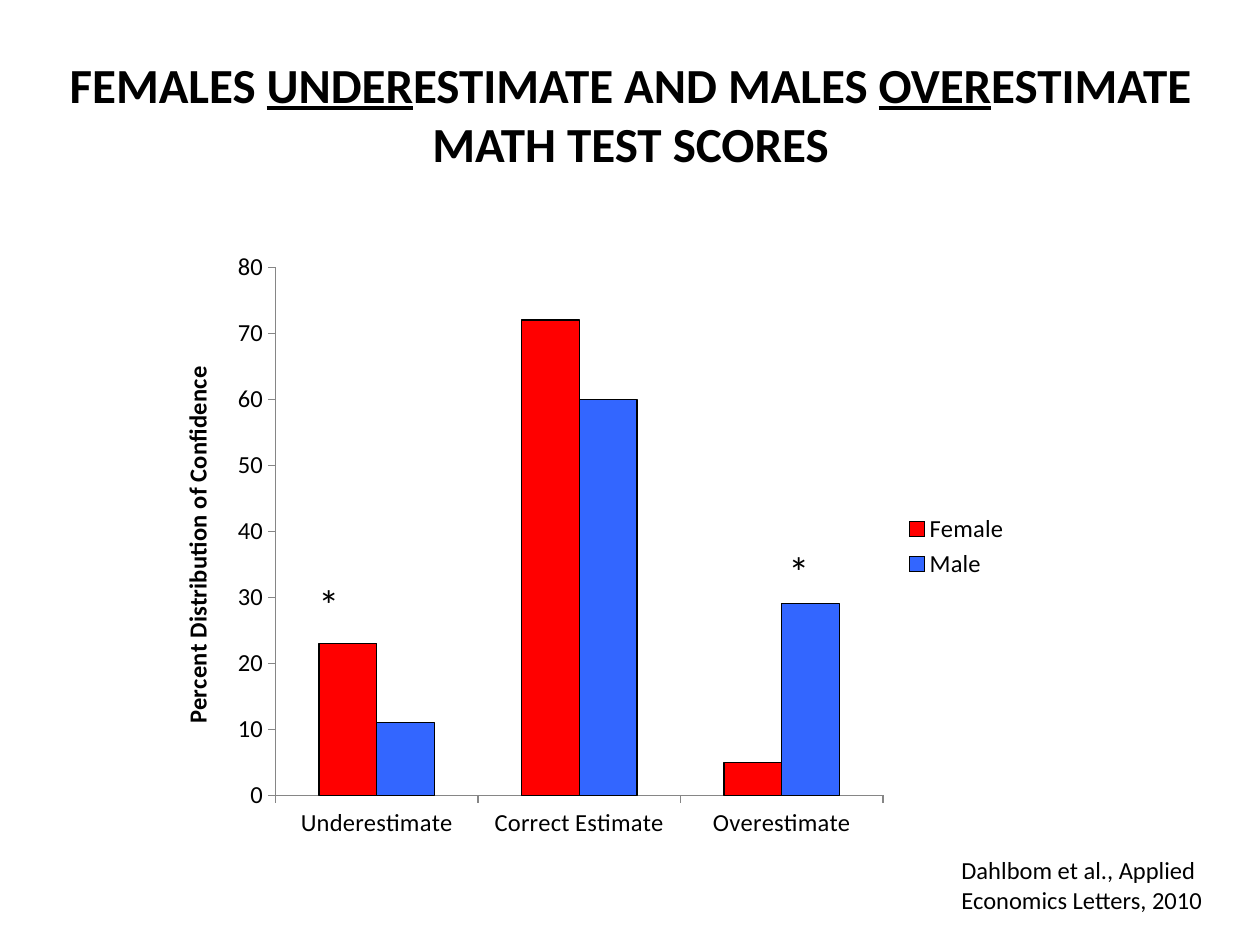
from lxml import etree
from pptx import Presentation
from pptx import util as u
from pptx.chart.data import CategoryChartData
from pptx.dml.color import RGBColor
from pptx.enum import chart as charts, text
from pptx.oxml.ns import qn

PX_PER_INCH = 126
FONT = "Calibri"
BLACK = "000000"
AXIS_GRAY = "868686"
CATEGORIES = ["Underestimate", "Correct Estimate", "Overestimate"]
SERIES = [("Female", (23, 72, 5), "FF0000"), ("Male", (11, 60, 29), "3366FF")]
TITLE = [
    ("FEMALES ", False),
    ("UNDER", True),
    ("ESTIMATE AND MALES ", False),
    ("OVER", True),
    ("ESTIMATE MATH TEST SCORES", False),
]


def px(length):
    return u.Emu(round(length * 914400 / PX_PER_INCH))


def color(value):
    return RGBColor.from_string(value)


def style_font(font, size, bold=False):
    font.name = FONT
    font.size = u.Pt(size)
    font.bold = bold
    font.color.rgb = color(BLACK)


def add_text(page, bounds, spans, size, bold=False, align=text.PP_ALIGN.LEFT, wrap=True):
    box = page.shapes.add_textbox(*map(px, bounds))
    box.text_frame.word_wrap = wrap
    box.text_frame.auto_size = text.MSO_AUTO_SIZE.SHAPE_TO_FIT_TEXT
    para = box.text_frame.paragraphs[0]
    para.alignment = align
    style_font(para.font, size, bold)
    for words, underlined in spans:
        span = para.add_run()
        span.text = words
        if underlined:
            span.font.underline = True


def place_plot(chart, fractions):
    plot_area = chart._chartSpace.chart.plotArea
    for old in plot_area.findall(qn("c:layout")):
        plot_area.remove(old)
    layout = etree.Element(qn("c:layout"))
    manual = etree.SubElement(layout, qn("c:manualLayout"))
    settings = [("layoutTarget", "inner"), ("xMode", "edge"), ("yMode", "edge")]
    for name, value in settings + list(zip("xywh", fractions)):
        etree.SubElement(manual, qn(f"c:{name}")).set("val", str(value))
    plot_area.insert(0, layout)


def style_axis(axis):
    axis.has_major_gridlines = False
    axis.major_tick_mark = charts.XL_TICK_MARK.OUTSIDE
    axis.minor_tick_mark = charts.XL_TICK_MARK.NONE
    axis.format.line.color.rgb = color(AXIS_GRAY)
    axis.format.line.width = u.Pt(0.75)
    style_font(axis.tick_labels.font, 14)


def add_confidence_chart(page, bounds):
    data = CategoryChartData()
    data.categories = CATEGORIES
    for name, values, _ in SERIES:
        data.add_series(name, values)
    kind = charts.XL_CHART_TYPE.COLUMN_CLUSTERED
    chart = page.shapes.add_chart(kind, *map(px, bounds), data).chart
    style_font(chart.font, 10)
    chart.has_title = False
    place_plot(chart, (0.14, 0.04, 0.7, 0.87))

    plot = chart.plots[0]
    plot.vary_by_categories = False
    plot.gap_width = 150
    plot.overlap = 0
    for series, (_, _, fill) in zip(plot.series, SERIES):
        series.format.fill.solid()
        series.format.fill.fore_color.rgb = color(fill)
        series.format.line.color.rgb = color(BLACK)
        series.format.line.width = u.Pt(0.75)

    style_axis(chart.category_axis)
    style_axis(chart.value_axis)
    chart.value_axis.minimum_scale = 0
    chart.value_axis.maximum_scale = 80
    chart.value_axis.major_unit = 10
    para = chart.value_axis.axis_title.text_frame.paragraphs[0]
    para.add_run().text = "Percent Distribution of Confidence"
    style_font(para.font, 14, True)

    chart.has_legend = True
    chart.legend.position = charts.XL_LEGEND_POSITION.RIGHT
    chart.legend.include_in_layout = False
    style_font(chart.legend.font, 14)


def main():
    deck = Presentation()
    deck.slide_width, deck.slide_height = px(1260), px(945)
    page = deck.slides.add_slide(deck.slide_layouts[6])
    add_text(page, (25, 48, 1211, 131), TITLE, 28, True, text.PP_ALIGN.CENTER)
    add_confidence_chart(page, (154, 243, 868, 607))
    add_text(page, (306, 572, 86, 63), [("*", False)], 24)
    add_text(page, (776, 539, 47, 63), [("*", False)], 24, wrap=False)
    citation = "Dahlbom et al., Applied Economics Letters, 2010"
    add_text(page, (949, 849, 311, 72), [(citation, False)], 14)
    deck.save("out.pptx")


if __name__ == "__main__":
    main()
